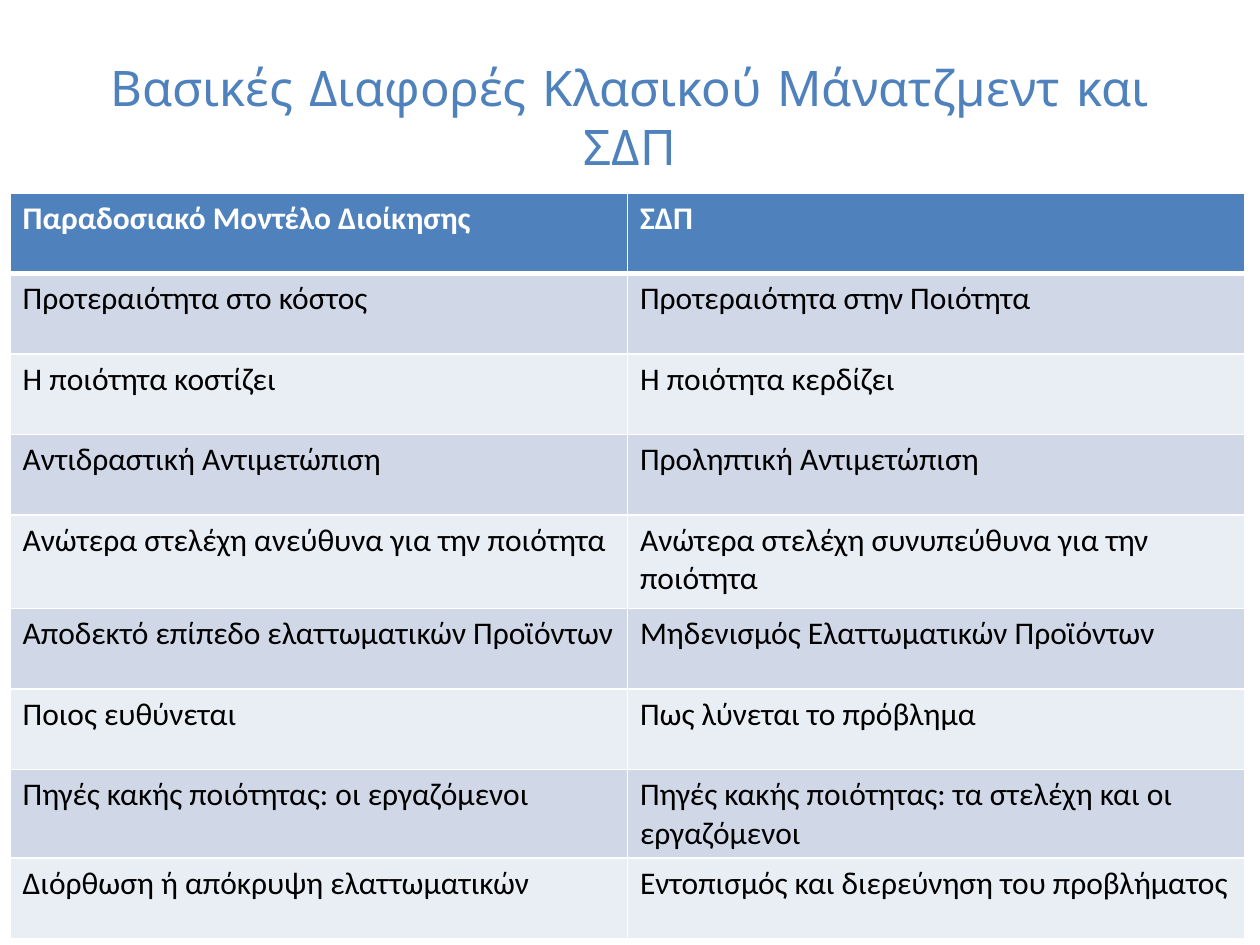
from typing import NamedTuple

from lxml import etree
from pptx import Presentation
from pptx.dml.color import RGBColor
from pptx.enum.text import MSO_ANCHOR, PP_ALIGN
from pptx.oxml.ns import qn
from pptx.util import Inches, Pt

CENTER = PP_ALIGN.CENTER
MIDDLE = MSO_ANCHOR.MIDDLE

COLORS = {
    "blue": "4F81BD",
    "white": "FFFFFF",
    "black": "000000",
    "dark": "D0D8E8",
    "light": "E9EDF4",
}


class Row(NamedTuple):
    old: str
    new: str
    height: float = 0.64


TITLE = "Βασικές Διαφορές Κλασικού Μάνατζμεντ και ΣΔΠ"
ROWS = [
    Row("Παραδοσιακό Μοντέλο Διοίκησης", "ΣΔΠ"),
    Row("Προτεραιότητα στο κόστος", "Προτεραιότητα στην Ποιότητα"),
    Row("Η ποιότητα κοστίζει", "Η ποιότητα κερδίζει"),
    Row("Αντιδραστική Αντιμετώπιση", "Προληπτική Αντιμετώπιση"),
    Row("Ανώτερα στελέχη ανεύθυνα για την ποιότητα",
        "Ανώτερα στελέχη συνυπεύθυνα για την ποιότητα", 0.74),
    Row("Αποδεκτό επίπεδο ελαττωματικών Προϊόντων",
        "Μηδενισμός Ελαττωματικών Προϊόντων"),
    Row("Ποιος ευθύνεται", "Πως λύνεται το πρόβλημα"),
    Row("Πηγές κακής ποιότητας: οι εργαζόμενοι",
        "Πηγές κακής ποιότητας: τα στελέχη και οι εργαζόμενοι", 0.68),
    Row("Διόρθωση ή απόκρυψη ελαττωματικών",
        "Εντοπισμός και διερεύνηση του προβλήματος"),
]


def rgb(name: str) -> RGBColor:
    return RGBColor.from_string(COLORS[name])


def style(para, face: str, size: int, color: str, bold: bool = False) -> None:
    font = para.font
    font.name, font.size, font.bold = face, Pt(size), bold
    font.color.rgb = rgb(color)


def add_edges(cell, widths: dict[str, int]) -> None:
    """Draw white cell borders; call before the fill to keep XML order."""
    props = cell._tc.get_or_add_tcPr()
    for tag, width in widths.items():
        line = etree.SubElement(props, qn(f"a:{tag}"), w=str(Pt(width)))
        fill = etree.SubElement(line, qn("a:solidFill"))
        etree.SubElement(fill, qn("a:srgbClr"), val=COLORS["white"])


def add_title(slide) -> None:
    box = slide.shapes.add_textbox(
        Inches(0.5), Inches(0.3), Inches(9), Inches(1.25))
    frame = box.text_frame
    frame.word_wrap = True
    frame.vertical_anchor = MIDDLE
    frame.text = TITLE
    para = frame.paragraphs[0]
    para.alignment = CENTER
    style(para, "Comic Neue", 28, "blue")


def add_grid(slide, rows: list[Row]) -> None:
    total = sum(row.height for row in rows)
    table = slide.shapes.add_table(
        len(rows), 2, Inches(0.08), Inches(1.53),
        Inches(9.8), Inches(total)).table
    for i, row in enumerate(rows):
        table.rows[i].height = Inches(row.height)
        head = i == 0
        back = "blue" if head else "dark" if i % 2 else "light"
        edges = {"lnL": 1, "lnR": 1, "lnT": 3 if i == 1 else 1,
                 "lnB": 3 if head else 1}
        for j, text in enumerate((row.old, row.new)):
            cell = table.cell(i, j)
            add_edges(cell, edges)
            cell.fill.solid()
            cell.fill.fore_color.rgb = rgb(back)
            cell.text = text
            style(cell.text_frame.paragraphs[0], "Calibri", 18,
                  "white" if head else "black", head)


def main() -> None:
    deck = Presentation()
    deck.slide_width, deck.slide_height = Inches(10), Inches(7.5)
    slide = deck.slides.add_slide(deck.slide_layouts[6])
    add_title(slide)
    add_grid(slide, ROWS)
    deck.save("out.pptx")


if __name__ == "__main__":
    main()
